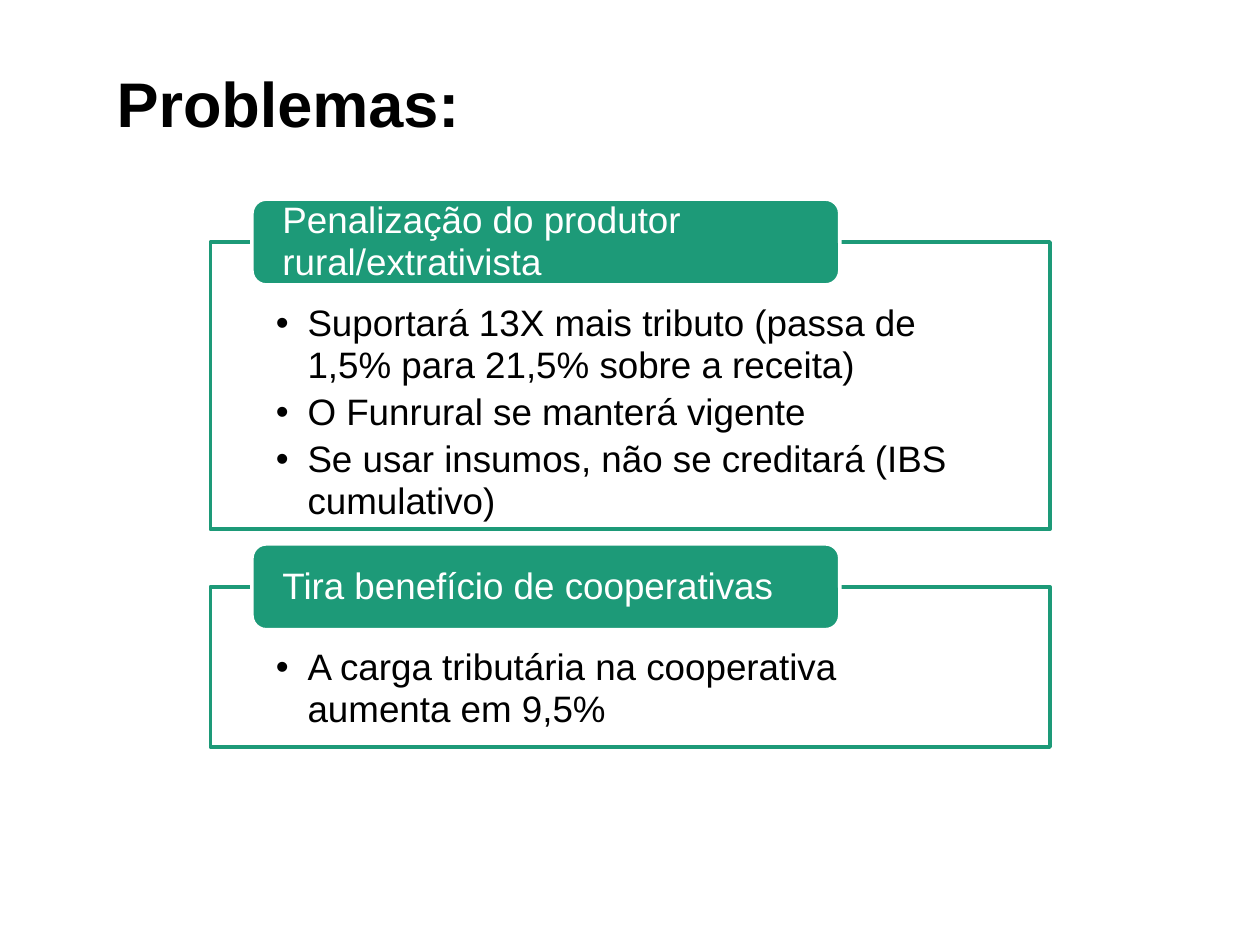
from lxml import etree
from pptx import Presentation
from pptx.dml.color import RGBColor
from pptx.enum.shapes import MSO_SHAPE
from pptx.enum.text import MSO_ANCHOR, MSO_AUTO_SIZE, PP_ALIGN
from pptx.oxml.ns import qn
from pptx.util import Cm, Pt

RECT, ROUNDED = MSO_SHAPE.RECTANGLE, MSO_SHAPE.ROUNDED_RECTANGLE
TOP, MIDDLE = MSO_ANCHOR.TOP, MSO_ANCHOR.MIDDLE
LEFT = PP_ALIGN.LEFT

TITLE = "Problemas:"
# heading, panel height in cm, bullets
PANELS = [
    ("Penalização do produtor rural/extrativista", 5.79, [
        "Suportará 13X mais tributo (passa de 1,5% para 21,5% sobre a receita)",
        "O Funrural se manterá vigente",
        "Se usar insumos, não se creditará (IBS cumulativo)",
    ]),
    ("Tira benefício de cooperativas", 3.23, [
        "A carga tributária na cooperativa aumenta em 9,5%",
    ]),
]
GREEN, WHITE, BLACK = "1D9A78", "FFFFFF", "000000"
PANEL_X, PANEL_Y, PANEL_W, PANEL_GAP = 4.24, 4.88, 16.93, 1.16
HEAD_X, HEAD_W, HEAD_H = 5.08, 11.85, 1.73
HANG = 0.64


def rgb(value):
    return RGBColor.from_string(value)


def write(sp, lines, size, color, anchor, insets, spacing, bold=False, bullets=False):
    """Fill a shape with paragraphs; insets are left, top, right, bottom in cm."""
    tf = sp.text_frame
    tf.word_wrap = True
    tf.auto_size = MSO_AUTO_SIZE.NONE
    tf.vertical_anchor = anchor
    tf.margin_left, tf.margin_top, tf.margin_right, tf.margin_bottom = map(Cm, insets)
    tf.text = "\n".join(lines)
    for p in tf.paragraphs:
        p.alignment = LEFT
        p.line_spacing = spacing
        p.space_before = Pt(0)
        p.space_after = Pt(3 if bullets else 0)
        if bullets:
            add_bullet(p)
        for r in p.runs:
            r.font.name = "Arial"
            r.font.size = Pt(size)
            r.font.bold = bold
            r.font.color.rgb = rgb(color)


def add_bullet(p):
    pPr = p._p.get_or_add_pPr()
    pPr.set("marL", str(Cm(HANG)))
    pPr.set("indent", str(-Cm(HANG)))
    etree.SubElement(pPr, qn("a:buFont")).set("typeface", "Arial")
    etree.SubElement(pPr, qn("a:buChar")).set("char", "•")


def add_box(slide, kind, x, y, w, h, fill, line):
    sp = slide.shapes.add_shape(kind, Cm(x), Cm(y), Cm(w), Cm(h))
    sp.shadow.inherit = False
    sp.fill.solid()
    sp.fill.fore_color.rgb = rgb(fill)
    sp.line.color.rgb = rgb(line)
    sp.line.width = Pt(2)
    return sp


def main():
    prs = Presentation()
    prs.slide_width, prs.slide_height = Cm(25.4), Cm(19.05)
    slide = prs.slides.add_slide(prs.slide_layouts[5])

    title = slide.shapes.title
    title.left, title.top, title.width, title.height = Cm(2.1), Cm(1.06), Cm(22.2), Cm(2.2)
    write(title, [TITLE], 36, BLACK, MIDDLE, (0.25, 0.13, 0.25, 0.13), 0.9, bold=True)

    y = PANEL_Y
    for heading, height, bullets in PANELS:
        panel = add_box(slide, RECT, PANEL_X, y, PANEL_W, height, WHITE, GREEN)
        write(panel, bullets, 21, BLACK, TOP, (1.32, 1.22, 1.32, 0.4), 0.95, bullets=True)
        head = add_box(slide, ROUNDED, HEAD_X, y - HEAD_H / 2, HEAD_W, HEAD_H, GREEN, WHITE)
        write(head, [heading], 21, WHITE, MIDDLE, (0.53, 0, 0.53, 0), 0.95)
        y += height + PANEL_GAP

    prs.save("out.pptx")


if __name__ == "__main__":
    main()
